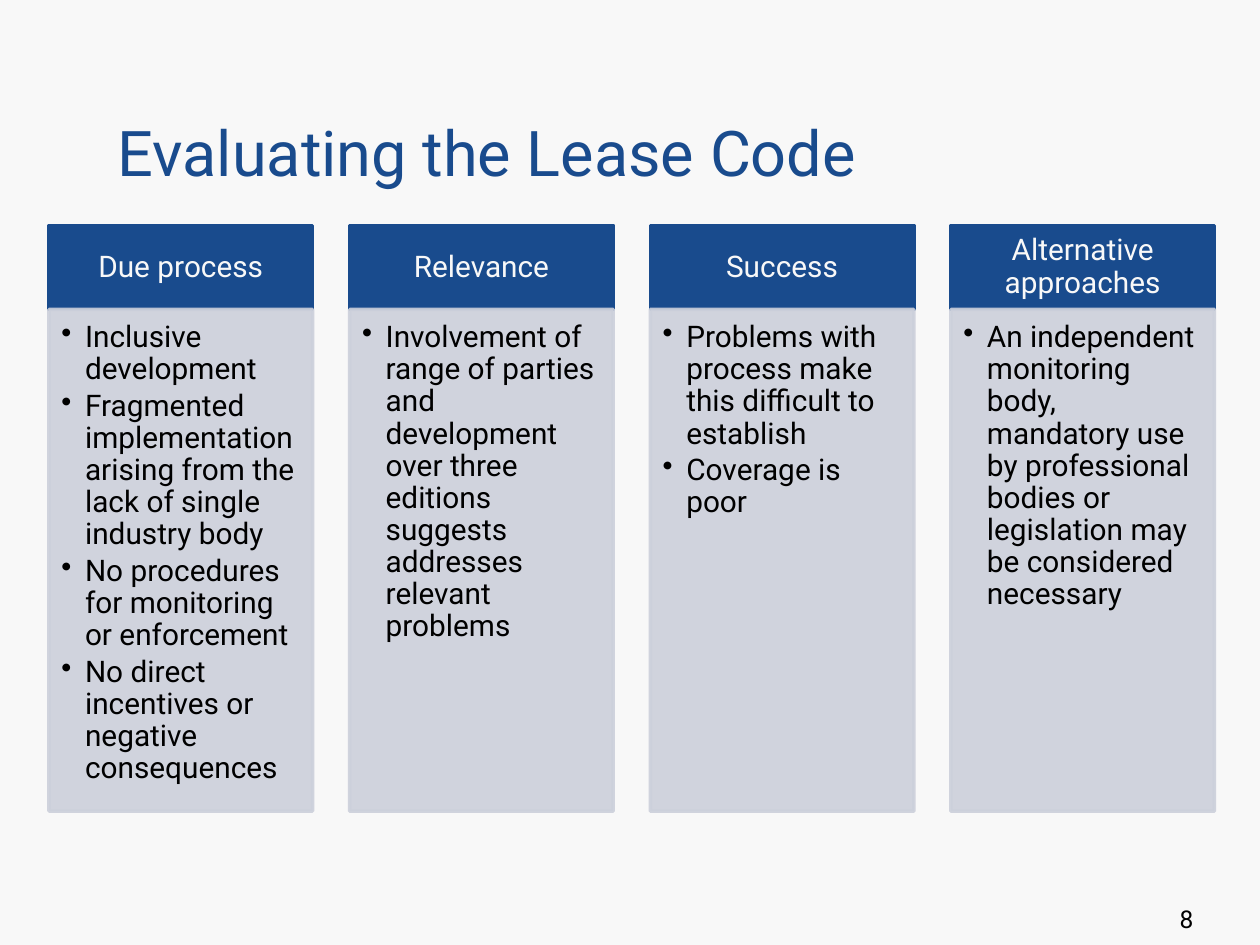
from lxml.etree import SubElement as Sub
from pptx import Presentation
from pptx.dml.color import RGBColor
from pptx.enum.shapes import MSO_SHAPE as Shape
from pptx.enum.text import MSO_ANCHOR as Anchor, MSO_AUTO_SIZE as Fit, PP_ALIGN as Align
from pptx.oxml.ns import qn
from pptx.util import Pt

BLUE = RGBColor(0x19, 0x4B, 0x8D)
GREY = RGBColor(0xCC, 0xD0, 0xDB)
PALE = RGBColor(0xF8, 0xF8, 0xF8)
BLACK = RGBColor(0, 0, 0)

COLUMNS = [
    ("Due process", [
        "Inclusive development",
        "Fragmented implementation arising from the lack of single industry body",
        "No procedures for monitoring or enforcement",
        "No direct incentives or negative consequences",
    ]),
    ("Relevance", [
        "Involvement of range of parties and development over three editions "
        "suggests addresses relevant problems",
    ]),
    ("Success", [
        "Problems with process make this difficult to establish",
        "Coverage is poor",
    ]),
    ("Alternative approaches", [
        "An independent monitoring body, mandatory use by professional bodies "
        "or legislation may be considered necessary",
    ]),
]


class Deck:
    """Holds the style and the current slide, and draws each kind of element."""

    face = "Roboto"
    size = 17

    def __init__(self, wide, high):
        self.file = Presentation()
        self.file.slide_width, self.file.slide_height = Pt(wide), Pt(high)
        self.slide = self.file.slides.add_slide(self.file.slide_layouts[5])
        fill = self.slide.background.fill
        fill.solid()
        fill.fore_color.rgb = PALE

    def style(self, para, size, color, align):
        para.alignment = align
        font = para.font
        font.name, font.size, font.color.rgb = self.face, Pt(size), color

    def title(self, text, box):
        shape = self.slide.shapes.title
        shape.left, shape.top, shape.width, shape.height = map(Pt, box)
        frame = shape.text_frame
        frame.text = text
        frame.auto_size = Fit.NONE
        frame.vertical_anchor = Anchor.BOTTOM
        self.style(frame.paragraphs[0], 36, BLUE, Align.LEFT)

    def number(self, text, box):
        frame = self.slide.shapes.add_textbox(*map(Pt, box)).text_frame
        frame.word_wrap = True
        frame.text = text
        self.style(frame.paragraphs[0], 14, BLACK, Align.RIGHT)

    def panel(self, box, color, insets, anchor, alpha=None):
        shape = self.slide.shapes.add_shape(Shape.RECTANGLE, *map(Pt, box))
        shape.shadow.inherit = False
        shape.line.width = Pt(2)
        for fill in (shape.fill, shape.line.fill):
            fill.solid()
            fill.fore_color.rgb = color
        if alpha:
            for tint in shape._element.spPr.iter(qn("a:srgbClr")):
                Sub(tint, qn("a:alpha"), val=str(alpha * 1000))
        frame = shape.text_frame
        frame.word_wrap = True
        frame.vertical_anchor = anchor
        (frame.margin_left, frame.margin_top,
         frame.margin_right, frame.margin_bottom) = map(Pt, insets)
        return frame

    def header(self, text, box):
        frame = self.panel(box, BLUE, (9.5, 5.5, 9.5, 5.5), Anchor.MIDDLE)
        frame.text = text
        para = frame.paragraphs[0]
        para.line_spacing = 0.9
        self.style(para, self.size, PALE, Align.CENTER)

    def bullets(self, items, box):
        frame = self.panel(box, GREY, (7.2, 7.2, 9.5, 10.8), Anchor.TOP, 90)
        frame.text = "\n".join(items)
        for para in frame.paragraphs:
            props = para._p.get_or_add_pPr()
            props.set("marL", str(Pt(13.5)))
            props.set("indent", str(Pt(-13.5)))
            Sub(props, qn("a:buChar"), char="•")
            para.level = 1
            para.line_spacing = 0.9
            para.space_after = Pt(2.55)
            self.style(para, self.size, BLACK, Align.LEFT)


def main():
    deck = Deck(720, 540)
    deck.title("Evaluating the Lease Code", (60, 21.6, 487.5, 90))
    left, top, wide, step = 28, 128.8, 150.6, 171.8
    head, body = 48, 286.8
    for i, (name, items) in enumerate(COLUMNS):
        x = left + i * step
        deck.header(name, (x, top, wide, head))
        deck.bullets(items, (x, top + head, wide, body))
    deck.number("8", (635.5, 513.3, 53.5, 26.7))
    deck.file.save("out.pptx")


if __name__ == "__main__":
    main()
